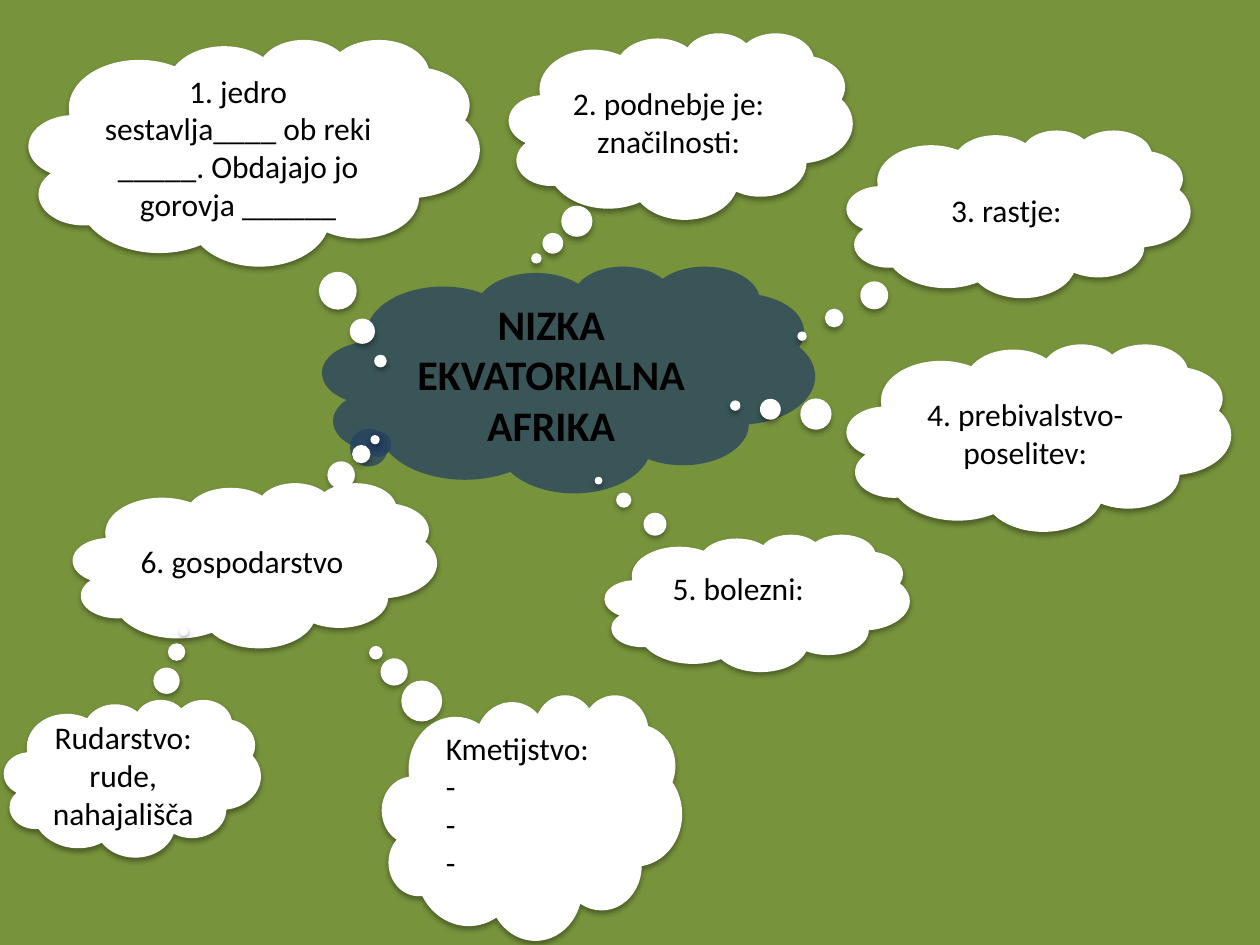
from lxml import etree
from pptx import Presentation
from pptx import util as u
from pptx.dml.color import RGBColor
from pptx.enum import shapes, text
from pptx.oxml.ns import qn

GREEN, NAVY, WHITE, BLACK = "77933C", "254061", "FFFFFF", "000000"

# box (left, top, width, height in cm), tail tip (x, y as shares of the size), text
CLOUDS = [
    ((17.07, 6.93, 7.75, 3.78), (-0.79, -0.17), "4. prebivalstvo- poselitev:"),
    ((0.58, 0.79, 9.09, 4.57), (0.28, 0.92),
     "1. jedro sestavlja____ ob reki _____. Obdajajo jo gorovja ______"),
    ((10.26, 0.66, 6.93, 3.76), (-0.42, 0.71), "2. podnebje je:\nznačilnosti:"),
    ((1.47, 9.73, 7.34, 3.33), (0.33, -0.76), "6. gospodarstvo"),
    ((0.08, 14.1, 5.18, 3.18), (0.2, -0.93), "Rudarstvo: rude, nahajališča"),
    ((17.07, 2.62, 6.93, 3.38), (-0.63, 0.73), "3. rastje:"),
]

# the same, with the label's box given relative to the cloud, and whether it wraps
LABELLED_CLOUDS = [
    ((12.19, 10.77, 6.15, 2.77), (-0.52, -0.89), "5. bolezni:",
     (1.12, 0.58, 3.2, 1.02), False),
    ((7.7, 14, 6.05, 4.95), (-0.52, -0.67), "Kmetijstvo:\n-\n-\n-",
     (1.04, 0.58, 6.55, 3.33), True),
]


def color(hex_string):
    return RGBColor.from_string(hex_string)


def lengths(box):
    return [u.Cm(value) for value in box]


def write(text_frame, words, size=18, bold=False, alignment=text.PP_ALIGN.CENTER):
    text_frame.text = words
    for paragraph in text_frame.paragraphs:
        paragraph.alignment = alignment
        for run in paragraph.runs:
            run.font.name = "Calibri"
            run.font.size = u.Pt(size)
            run.font.bold = bold
            run.font.color.rgb = color(BLACK)


def set_opacity(color_element, percent):
    etree.SubElement(color_element, qn("a:alpha"), val=str(percent * 1000))


def add_soft_shadow(shape):
    """Replace the theme shadow with a faint one straight below the shape."""
    effects = shape._element.spPr.find(qn("a:effectLst"))
    shadow = etree.SubElement(
        effects, qn("a:outerShdw"), blurRad=str(u.Pt(3.1)), dist=str(u.Pt(1.8)),
        dir=str(90 * 60000), rotWithShape="0")
    set_opacity(etree.SubElement(shadow, qn("a:srgbClr"), val=BLACK), 35)


def add_cloud(slide, box, tail, fill=WHITE):
    shape = slide.shapes.add_shape(shapes.MSO_SHAPE.CLOUD_CALLOUT, *lengths(box))
    shape.adjustments[0], shape.adjustments[1] = tail
    shape.shadow.inherit = False
    shape.fill.solid()
    shape.fill.fore_color.rgb = color(fill)
    shape.line.fill.background()
    shape.text_frame.vertical_anchor = text.MSO_ANCHOR.MIDDLE
    return shape


def add_topic(slide, box):
    shape = add_cloud(slide, box, (-0.39, 0.29), NAVY)
    set_opacity(shape._element.spPr.find(f"{qn('a:solidFill')}/{qn('a:srgbClr')}"), 74)
    write(shape.text_frame, "NIZKA EKVATORIALNA AFRIKA", size=24, bold=True)


def add_thought(slide, box, tail, words):
    shape = add_cloud(slide, box, tail)
    add_soft_shadow(shape)
    if words:
        write(shape.text_frame, words)


def add_label(slide, cloud_box, offset_box, words, wrap):
    left, top, width, height = offset_box
    box = (cloud_box[0] + left, cloud_box[1] + top, width, height)
    text_frame = slide.shapes.add_textbox(*lengths(box)).text_frame
    text_frame.word_wrap = wrap
    text_frame.auto_size = text.MSO_AUTO_SIZE.SHAPE_TO_FIT_TEXT
    write(text_frame, words, alignment=text.PP_ALIGN.LEFT)


def main():
    presentation = Presentation()
    presentation.slide_width, presentation.slide_height = u.Cm(25.4), u.Cm(19.05)
    slide = presentation.slides.add_slide(presentation.slide_layouts[6])
    slide.background.fill.solid()
    slide.background.fill.fore_color.rgb = color(GREEN)

    add_topic(slide, (6.5, 5.36, 9.93, 4.57))
    for box, tail, words in CLOUDS:
        add_thought(slide, box, tail, words)
    for box, tail, words, offset_box, wrap in LABELLED_CLOUDS:
        add_thought(slide, box, tail, "")
        add_label(slide, box, offset_box, words, wrap)

    presentation.save("out.pptx")


if __name__ == "__main__":
    main()
